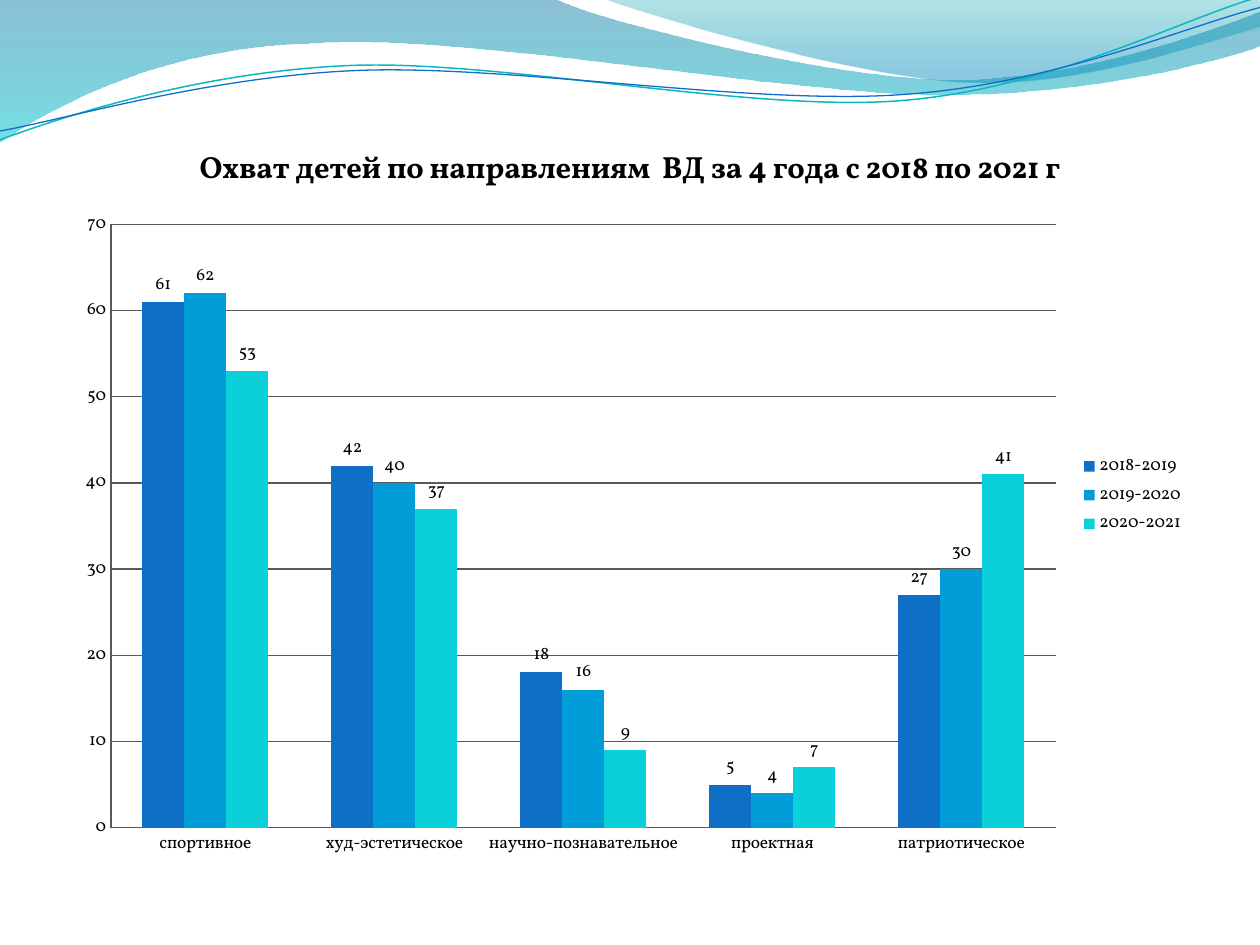
from dataclasses import dataclass
from math import cos, radians, sin

from lxml import etree
from pptx import Presentation
from pptx.chart.data import CategoryChartData
from pptx.dml.color import RGBColor
from pptx.enum.chart import XL_CHART_TYPE, XL_LABEL_POSITION, XL_LEGEND_POSITION, XL_TICK_MARK
from pptx.oxml.ns import qn
from pptx.util import Cm, Pt

COLUMNS = XL_CHART_TYPE.COLUMN_CLUSTERED
ABOVE_BAR = XL_LABEL_POSITION.OUTSIDE_END
LEGEND_RIGHT = XL_LEGEND_POSITION.RIGHT
NO_TICK = XL_TICK_MARK.NONE
DOWNWARD = 270
TILT = -2.7


@dataclass(frozen=True)
class Theme:
    font: str = "Vollkorn"
    text: str = "000000"
    grid: str = "595959"
    years: tuple = ("0F6FC6", "009DD9", "0BD0D9")
    # Each gradient stop: position, colour, opacity in percent
    wide_wave: tuple = ((0, "0074A1", 45), (100, "00C6CF", 55))
    right_wave: tuple = ((0, "00A1A9", 30), (80, "008BBF", 45))
    teal_line: str = "0AB8BF"
    blue_line: str = "0F6FC6"
    title_size: float = 17.5  # largest half point that keeps the title on one line
    body_size: float = 10


THEME = Theme()

# Wave outlines in inches: a pair is a straight step, six numbers a Bezier step
WIDE_WAVE = [
    (0, 0), (4.4, -0.01), (4.76, 0.17, 6.64, 0.63, 7.58, 0.63),
    (8.53, 0.63, 9.58, 0.26, 10, 0.09), (10.01, 0.36),
    (9.83, 0.44, 8.7, 0.76, 7.46, 0.75), (6.22, 0.75, 3.82, 0.28, 2.57, 0.34),
    (1.29, 0.36, 0.46, 0.83, -0.01, 1.13),
]
RIGHT_WAVE = [
    (4.79, -0.01), (5.09, 0.11, 6.82, 0.62, 7.69, 0.65),
    (8.56, 0.69, 9.61, 0.32, 10, 0.21), (10, 0),
]
TEAL_LINE = [
    (0, 1.11), (0.48, 0.93, 1.58, 0.57, 2.77, 0.52),
    (3.95, 0.47, 5.93, 0.89, 7.13, 0.8), (8.33, 0.71, 9.38, 0.15, 9.98, -0.02),
]
BLUE_LINE = [
    (0, 1.04), (0.47, 0.96, 1.64, 0.61, 2.83, 0.56),
    (4.03, 0.51, 5.97, 0.84, 7.17, 0.75), (8.36, 0.67, 9.41, 0.21, 10, 0.06),
]
TEAL_CENTER, BLUE_CENTER = (4.99, 0.58), (5, 0.59)

TITLE = "Охват детей по направлениям  ВД за 4 года с 2018 по 2021 г"
DIRECTIONS = ["спортивное", "худ-эстетическое", "научно-познавательное",
              "проектная", "патриотическое"]
COVERAGE = {
    "2018-2019": (61, 42, 18, 5, 27),
    "2019-2020": (62, 40, 16, 4, 30),
    "2020-2021": (53, 37, 9, 7, 41),
}
# Left, top, width and height in inches
CHART_BOX = (0.5, 0.94, 9, 5.98)
PLOT_BOX = (0.88, 1.78, 7.5, 4.79)


def inches(value):
    return Cm(value * 2.54)


def step_points(step):
    return list(zip(step[::2], step[1::2]))


def turn(steps, center, degrees):
    """Rotate every point of the steps clockwise about the center."""
    cx, cy = center
    c, s = cos(radians(degrees)), sin(radians(degrees))
    return [
        tuple(value for x, y in step_points(step)
              for value in (cx + (x - cx) * c - (y - cy) * s,
                            cy + (x - cx) * s + (y - cy) * c))
        for step in steps
    ]


def bend(shape, steps):
    """Join the three straight segments of each Bezier step into one curve."""
    segments = iter(list(shape._element.spPr.iter(qn("a:lnTo"))))
    for step in steps:
        first = next(segments)
        if len(step) == 6:
            first.tag = qn("a:cubicBezTo")
            for _ in range(2):
                extra = next(segments)
                first.append(extra[0])
                extra.getparent().remove(extra)


def format_font(font, size=THEME.body_size, bold=False, color=THEME.text):
    font.name, font.size, font.bold = THEME.font, Pt(size), bold
    font.color.rgb = RGBColor.from_string(color)


def write_text(frame, text, **style):
    frame.text = text
    format_font(frame.paragraphs[0].runs[0].font, **style)


def format_line(line, color, width=0.75):
    line.color.rgb = RGBColor.from_string(color)
    line.width = Pt(width)


def place_plot(chart, chart_box, plot_box):
    plot_area = chart._chartSpace.chart.plotArea
    for old in plot_area.findall(qn("c:layout")):
        plot_area.remove(old)
    left, top, width, height = chart_box
    x, y, w, h = plot_box
    settings = {"layoutTarget": "inner", "xMode": "edge", "yMode": "edge",
                "x": (x - left) / width, "y": (y - top) / height,
                "w": w / width, "h": h / height}
    layout = etree.Element(qn("c:layout"))
    manual = etree.SubElement(layout, qn("c:manualLayout"))
    for tag, value in settings.items():
        etree.SubElement(manual, qn(f"c:{tag}")).set("val", str(value))
    plot_area.insert(0, layout)


class SlideBuilder:
    def __init__(self, slide, theme):
        self.slide, self.theme = slide, theme

    def outline(self, steps, closed):
        points = [(inches(x), inches(y)) for step in steps for x, y in step_points(step)]
        builder = self.slide.shapes.build_freeform(*points[0])
        builder.add_line_segments(points[1:], close=closed)
        shape = builder.convert_to_shape()
        bend(shape, steps[1:])
        shape.shadow.inherit = False
        return shape

    def wave(self, steps, stops):
        shape = self.outline(steps, closed=True)
        shape.line.fill.background()
        shape.fill.gradient()
        shape.fill.gradient_angle = DOWNWARD
        for stop, (position, color, _) in zip(shape.fill.gradient_stops, stops):
            stop.position = position / 100
            stop.color.rgb = RGBColor.from_string(color)
        colors = shape._element.spPr.iter(qn("a:srgbClr"))
        for color, (_, _, opacity) in zip(colors, stops):
            etree.SubElement(color, qn("a:alpha")).set("val", str(opacity * 1000))

    def tilted_curve(self, steps, center, color, width):
        shape = self.outline(turn(steps, center, -TILT), closed=False)
        shape.rotation = TILT
        shape.fill.background()
        format_line(shape.line, color, width)

    def column_chart(self, title, categories, series, box, plot_box):
        data = CategoryChartData()
        data.categories = categories
        for name, values in series.items():
            data.add_series(name, values)
        chart = self.slide.shapes.add_chart(COLUMNS, *map(inches, box), data).chart
        format_font(chart.font)
        write_text(chart.chart_title.text_frame, title,
                   size=self.theme.title_size, bold=True)
        chart.has_legend = True
        chart.legend.position = LEGEND_RIGHT
        chart.legend.include_in_layout = False
        format_font(chart.legend.font)

        for axis in (chart.category_axis, chart.value_axis):
            axis.major_tick_mark = axis.minor_tick_mark = NO_TICK
            format_font(axis.tick_labels.font)
            format_line(axis.format.line, self.theme.grid)
        format_line(chart.value_axis.major_gridlines.format.line, self.theme.grid)

        plot = chart.plots[0]
        plot.gap_width, plot.overlap, plot.vary_by_categories = 150, 0, False
        for year, color in zip(plot.series, self.theme.years):
            year.format.fill.solid()
            year.format.fill.fore_color.rgb = RGBColor.from_string(color)
            labels = year.data_labels
            labels.show_value, labels.position = True, ABOVE_BAR
            format_font(labels.font)
        place_plot(chart, box, plot_box)


def main():
    deck = Presentation()
    deck.slide_width, deck.slide_height = Cm(25.4), Cm(19.05)
    page = SlideBuilder(deck.slides.add_slide(deck.slide_layouts[6]), THEME)
    page.wave(WIDE_WAVE, THEME.wide_wave)
    page.wave(RIGHT_WAVE, THEME.right_wave)
    page.tilted_curve(TEAL_LINE, TEAL_CENTER, THEME.teal_line, 0.85)
    page.tilted_curve(BLUE_LINE, BLUE_CENTER, THEME.blue_line, 0.75)
    page.column_chart(TITLE, DIRECTIONS, COVERAGE, CHART_BOX, PLOT_BOX)
    deck.save("out.pptx")


if __name__ == "__main__":
    main()
